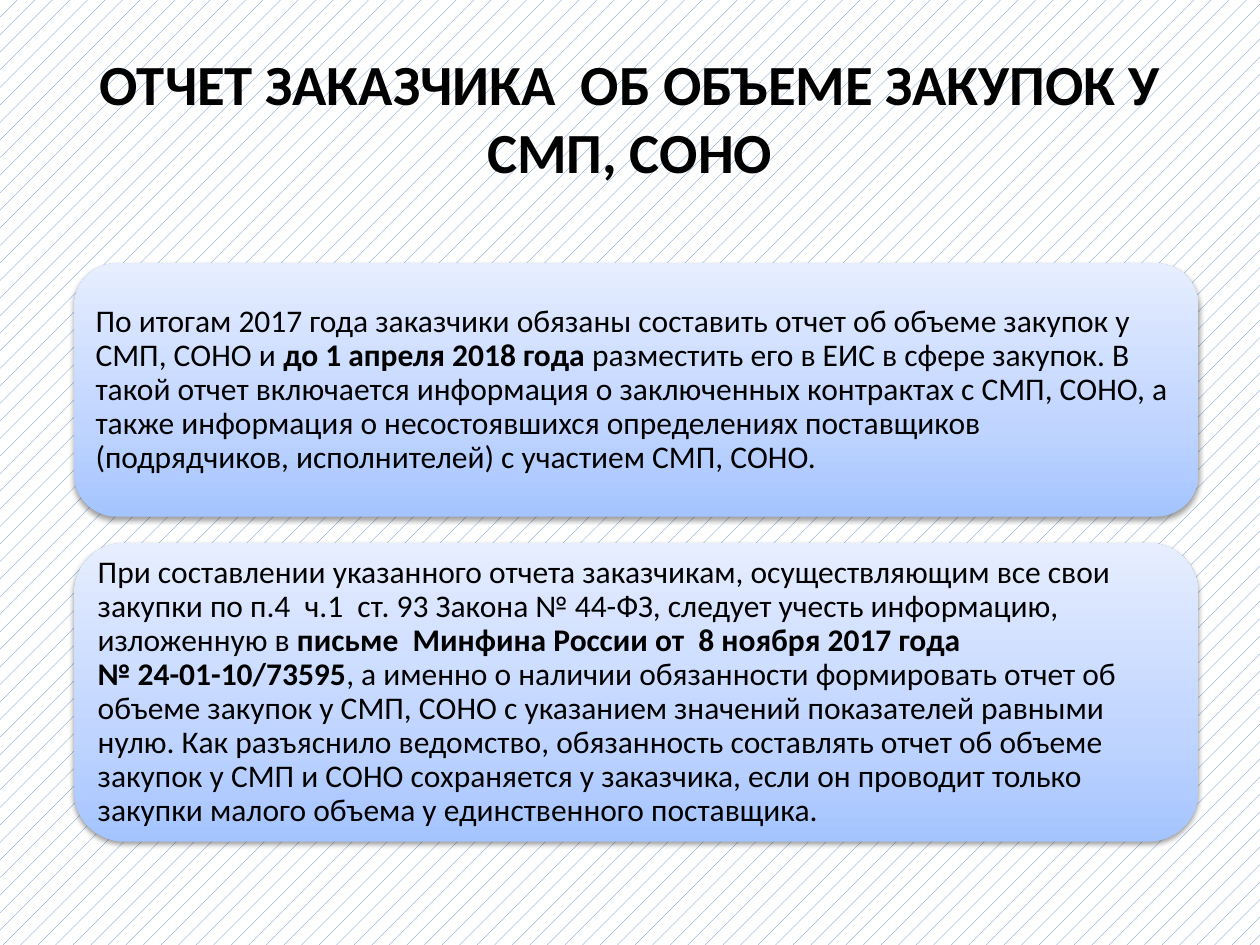
import copy
from typing import NamedTuple

import lxml.etree
import pptx
import pptx.dml.color
import pptx.enum.dml
import pptx.enum.shapes
import pptx.enum.text
import pptx.oxml
import pptx.oxml.ns
import pptx.util

FONT = "Calibri"
WIDTH = pptx.util.Inches(10)
HEIGHT = pptx.util.Inches(7.5)
BLACK = "000000"
GRADIENT = ((0, "A4C4FF"), (0.35, "BFD4FF"), (1, "E6EEFF"))
PANEL_LEFT = 0.059
PANEL_WIDTH = 0.892
PANELS_TOP = 2.09 / 7.5
PANEL_GAP = 0.21 / 7.5


class Phrase(NamedTuple):
    text: str
    bold: bool = False


class Panel(NamedTuple):
    height: float
    phrases: tuple[Phrase, ...]


TITLE = "ОТЧЕТ ЗАКАЗЧИКА  ОБ ОБЪЕМЕ ЗАКУПОК У СМП, СОНО"
PANELS = (
    Panel(2.01 / 7.5, (
        Phrase("По итогам 2017 года заказчики обязаны составить отчет об объеме "
               "закупок у СМП, СОНО и "),
        Phrase("до 1 апреля 2018 года", True),
        Phrase(" разместить его в ЕИС в сфере закупок. В такой отчет включается "
               "информация о заключенных контрактах с СМП, СОНО, а также информация "
               "о несостоявшихся определениях поставщиков (подрядчиков, исполнителей) "
               "с участием СМП, СОНО."),
    )),
    Panel(2.37 / 7.5, (
        Phrase("При составлении указанного отчета заказчикам, осуществляющим все свои "
               "закупки по п.4  ч.1  ст. 93 Закона № 44-ФЗ, следует учесть информацию, "
               "изложенную в "),
        Phrase("письме  Минфина России от  8 ноября 2017 года\n№ 24-01-10/73595", True),
        Phrase(", а именно о наличии обязанности формировать отчет об объеме закупок "
               "у СМП, СОНО с указанием значений показателей равными нулю. Как "
               "разъяснило ведомство, обязанность составлять отчет об объеме закупок "
               "у СМП и СОНО сохраняется у заказчика, если он проводит только закупки "
               "малого объема у единственного поставщика."),
    )),
)


def color(value: str) -> pptx.dml.color.RGBColor:
    return pptx.dml.color.RGBColor.from_string(value)


def format_run(run, size: float, bold: bool) -> None:
    run.font.name = FONT
    run.font.size = pptx.util.Pt(size)
    run.font.bold = bold
    run.font.color.rgb = color(BLACK)


def paint_background(slide) -> None:
    fill = slide.background.fill
    fill.patterned()
    fill.pattern = pptx.enum.dml.MSO_PATTERN.PERCENT_5
    fill.fore_color.rgb = color("4F81BD")
    fill.back_color.rgb = color("FFFFFF")


def write_title(slide) -> None:
    title = slide.shapes.title
    title.left, title.top = int(WIDTH * 0.05), int(HEIGHT * 0.04)
    title.width, title.height = int(WIDTH * 0.9), int(HEIGHT / 6)
    frame = title.text_frame
    frame.text = TITLE
    frame.vertical_anchor = pptx.enum.text.MSO_ANCHOR.MIDDLE
    frame.paragraphs[0].alignment = pptx.enum.text.PP_ALIGN.CENTER
    format_run(frame.paragraphs[0].runs[0], 32.4, True)


def fill_gradient(shape) -> None:
    shape.fill.gradient()
    shape.fill.gradient_angle = 90
    stops = shape.fill._fill._gradFill.gsLst
    stops.append(copy.deepcopy(stops[0]))
    for stop, (position, tint) in zip(shape.fill.gradient_stops, GRADIENT):
        stop.position = position
        stop.color.rgb = color(tint)


def cast_shadow(shape) -> None:
    shape.shadow.inherit = False
    effects = shape._element.spPr.find(pptx.oxml.ns.qn("a:effectLst"))
    shadow = lxml.etree.SubElement(
        effects, pptx.oxml.ns.qn("a:outerShdw"),
        blurRad=str(pptx.util.Pt(3.1)), dist=str(pptx.util.Pt(1.6)),
        dir="5400000", rotWithShape="0")
    tone = lxml.etree.SubElement(shadow, pptx.oxml.ns.qn("a:srgbClr"), val=BLACK)
    lxml.etree.SubElement(tone, pptx.oxml.ns.qn("a:alpha"), val="38000")


def write_phrases(frame, phrases: tuple[Phrase, ...]) -> None:
    frame.word_wrap = True
    frame.vertical_anchor = pptx.enum.text.MSO_ANCHOR.MIDDLE
    inset = pptx.util.Inches(0.07)
    frame.margin_left = frame.margin_right = inset
    frame.margin_top = frame.margin_bottom = inset
    paragraph = frame.paragraphs[0]
    paragraph.alignment = pptx.enum.text.PP_ALIGN.LEFT
    paragraph.line_spacing = 0.9
    for phrase in phrases:
        for index, line in enumerate(phrase.text.split("\n")):
            if index:
                paragraph.add_line_break()
            run = paragraph.add_run()
            run.text = line
            format_run(run, 18, phrase.bold)


def draw_panel(slide, panel: Panel, top: float) -> None:
    shape = slide.shapes.add_shape(
        pptx.enum.shapes.MSO_SHAPE.ROUNDED_RECTANGLE,
        int(WIDTH * PANEL_LEFT), int(HEIGHT * top),
        int(WIDTH * PANEL_WIDTH), int(HEIGHT * panel.height))
    shape.line.fill.background()
    fill_gradient(shape)
    cast_shadow(shape)
    write_phrases(shape.text_frame, panel.phrases)


def main() -> None:
    presentation = pptx.Presentation()
    presentation.slide_width, presentation.slide_height = WIDTH, HEIGHT
    slide = presentation.slides.add_slide(presentation.slide_layouts[5])
    paint_background(slide)
    write_title(slide)
    top = PANELS_TOP
    for panel in PANELS:
        draw_panel(slide, panel, top)
        top += panel.height + PANEL_GAP
    presentation.save("out.pptx")


if __name__ == "__main__":
    main()
